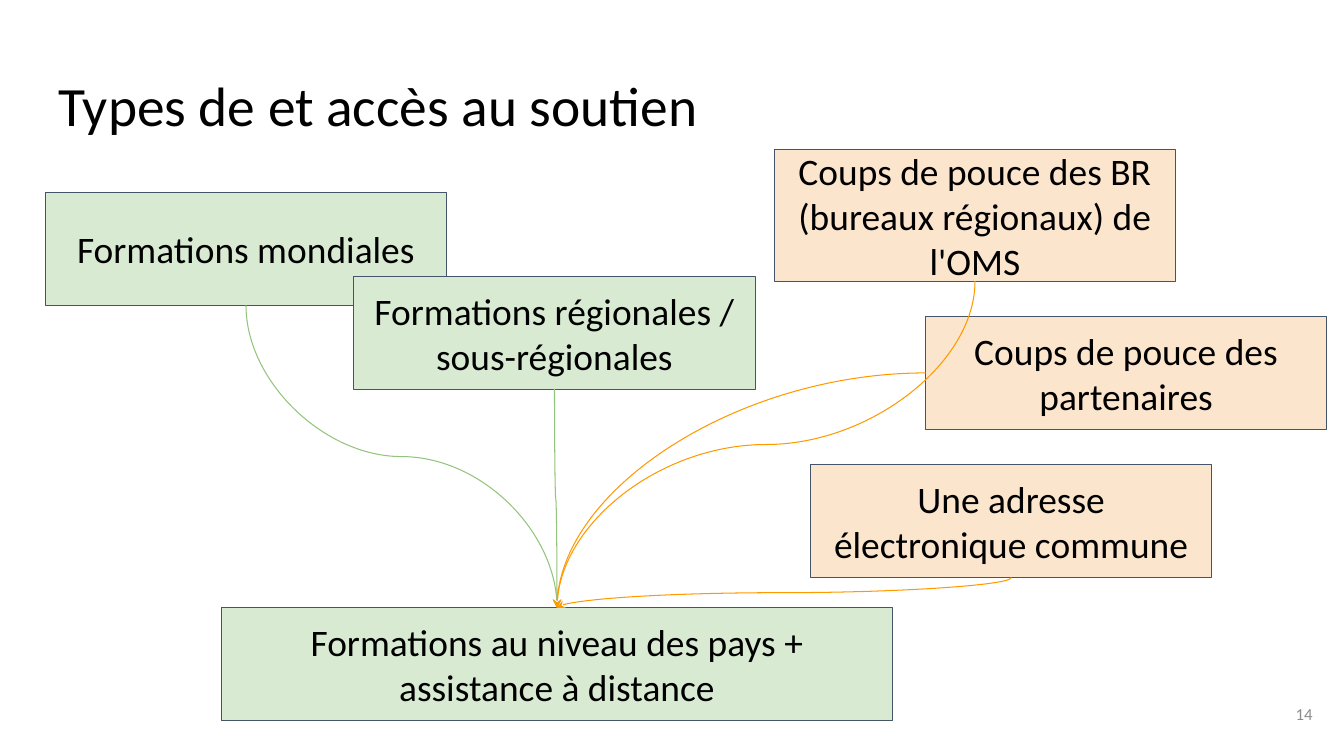
from lxml.etree import SubElement
from pptx import Presentation
from pptx.dml.color import RGBColor
from pptx.enum.shapes import MSO_CONNECTOR as Link, MSO_SHAPE as Shape
from pptx.enum.text import MSO_ANCHOR as Anchor, MSO_AUTO_SIZE as Fit, PP_ALIGN as Align
from pptx.oxml.ns import qn
from pptx.util import Inches, Pt

BLACK = RGBColor(0x00, 0x00, 0x00)
GREY = RGBColor(0x8C, 0x8C, 0x8C)
SLATE = RGBColor(0x44, 0x54, 0x6A)
MINT = RGBColor(0xD9, 0xEA, 0xD3)
PEACH = RGBColor(0xFC, 0xE5, 0xCD)
GREEN = RGBColor(0x93, 0xC4, 0x7D)
ORANGE = RGBColor(0xFF, 0x99, 0x00)
TOP, LEFT, BOTTOM = 0, 1, 2


def write(shape, text, size, color, align, anchor):
    frame = shape.text_frame
    frame.text = text
    frame.word_wrap = True
    frame.auto_size = Fit.NONE
    frame.vertical_anchor = anchor
    frame.margin_left = frame.margin_right = Inches(0.13)
    frame.margin_top = frame.margin_bottom = Inches(0.13)
    para = frame.paragraphs[0]
    para.alignment = align
    para.font.name = "Calibri"
    para.font.size = Pt(size)
    para.font.color.rgb = color
    return para


def bend(link):
    """Turn a curve so that it leaves and arrives vertically."""
    x1, y1, x2, y2 = link.begin_x, link.begin_y, link.end_x, link.end_y
    wide, high = y2 - y1, abs(x2 - x1)
    link.left, link.top = (x1 + x2 - wide) // 2, (y1 + y2 - high) // 2
    link.width, link.height = wide, high
    right = x2 > x1
    xfrm = link._element.spPr.find(qn("a:xfrm"))
    xfrm.set("rot", str((270 if right else 90) * 60000))
    xfrm.set("flipH", "1" if right else "0")


prs = Presentation()
prs.slide_width, prs.slide_height = Inches(13.33), Inches(7.5)
slide = prs.slides.add_slide(prs.slide_layouts[5])
shapes = slide.shapes

title = shapes.title
title.left, title.top = Inches(0.45), Inches(0.65)
title.width, title.height = Inches(12.42), Inches(0.84)
head = write(title, "Types de et accès au soutien", 39.6, BLACK, Align.LEFT, Anchor.TOP)
head.line_spacing = 0.9

number = shapes.add_textbox(Inches(12.35), Inches(6.8), Inches(0.8), Inches(0.57))
write(number, "14", 12, GREY, Align.RIGHT, Anchor.MIDDLE)

boxes = {}
for key, text, x, y, w, h, fill in [
    ("world", "Formations mondiales", 0.45, 1.91, 3.98, 1.12, MINT),
    ("region", "Formations régionales / sous-régionales", 3.51, 2.74, 3.98, 1.12, MINT),
    ("country", "Formations au niveau des pays + assistance à distance",
     2.2, 6.03, 6.65, 1.12, MINT),
    ("office", "Coups de pouce des BR (bureaux régionaux) de l'OMS",
     7.68, 1.48, 3.98, 1.31, PEACH),
    ("mail", "Une adresse électronique commune", 8.04, 4.61, 3.98, 1.12, PEACH),
    ("partner", "Coups de pouce des partenaires", 9.18, 3.14, 3.98, 1.12, PEACH),
]:
    box = shapes.add_shape(Shape.RECTANGLE, Inches(x), Inches(y), Inches(w), Inches(h))
    box.shadow.inherit = False
    box.fill.solid()
    box.fill.fore_color.rgb = fill
    box.line.color.rgb = SLATE
    box.line.width = Pt(0.75)
    write(box, text, 26.7, BLACK, Align.CENTER, Anchor.MIDDLE)
    boxes[key] = box

for key, side, color in [
    ("world", BOTTOM, GREEN),
    ("region", BOTTOM, GREEN),
    ("office", BOTTOM, ORANGE),
    ("partner", LEFT, ORANGE),
    ("mail", BOTTOM, ORANGE),
]:
    link = shapes.add_connector(Link.CURVE, 0, 0, 0, 0)
    link.begin_connect(boxes[key], side)
    link.end_connect(boxes["country"], TOP)
    link.line.color.rgb = color
    link.line.width = Pt(0.75)
    props = link._element.spPr
    SubElement(props.find(qn("a:ln")), qn("a:tailEnd"), type="stealth")
    SubElement(props, qn("a:effectLst"))
    if side == BOTTOM:
        bend(link)
    else:
        props.find(qn("a:prstGeom")).set("prst", "curvedConnector2")

prs.save("out.pptx")
